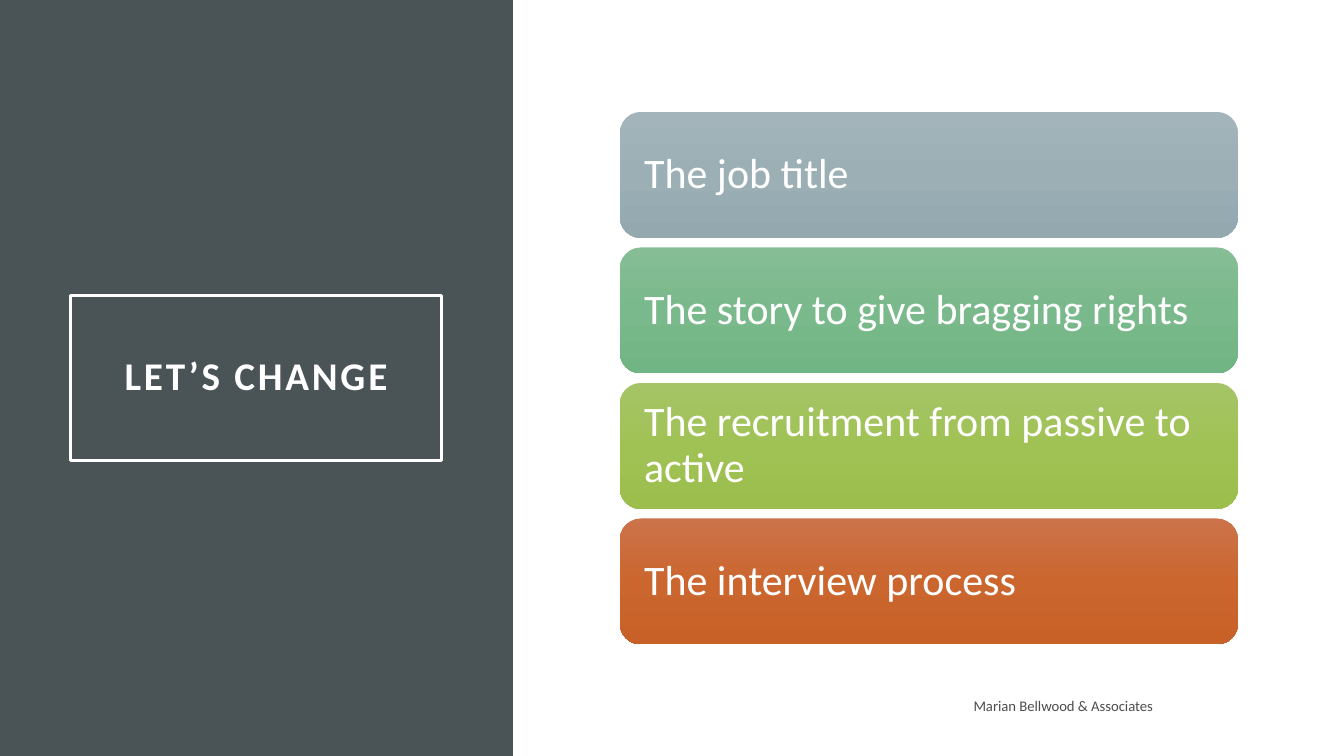
from copy import deepcopy

from pptx import Presentation
from pptx.dml.color import RGBColor
from pptx.enum.shapes import MSO_SHAPE
from pptx.enum.text import MSO_ANCHOR, MSO_AUTO_SIZE, PP_ALIGN
from pptx.oxml.ns import qn
from pptx.util import Cm, Pt

FONT = "Calibri"
WHITE = RGBColor(0xFF, 0xFF, 0xFF)
SLATE = RGBColor(0x4A, 0x53, 0x56)
FOOTER_GREY = RGBColor(0x4D, 0x4D, 0x4D)

# Each topic with the top, middle and bottom colour of its bar
TOPICS = [
    ("The job title", ("A3B5BB", "9BAFB5", "93A9AF")),
    ("The story to give bragging rights", ("86BD95", "7AB98B", "72B584")),
    ("The recruitment from passive to active", ("A5C466", "A0C255", "9BBE4D")),
    ("The interview process", ("CC734B", "CB662F", "C86128")),
]


def set_text(shape, text, size, color, alignment, inset, bold=False):
    frame = shape.text_frame
    frame.text = text
    frame.word_wrap = True
    frame.auto_size = MSO_AUTO_SIZE.NONE
    frame.vertical_anchor = MSO_ANCHOR.MIDDLE
    frame.margin_left = frame.margin_right = inset
    frame.margin_top = frame.margin_bottom = inset
    paragraph = frame.paragraphs[0]
    paragraph.alignment = alignment
    paragraph.line_spacing = 0.9
    font = paragraph.font
    font.name, font.size, font.bold = FONT, Pt(size), bold
    font.color.rgb = color
    return paragraph


def fill_vertical_gradient(shape, colors):
    shape.fill.gradient()
    shape.fill.gradient_angle = 270
    # Add a middle stop between the two default ones
    first_stop = shape._element.spPr.find(f".//{qn('a:gs')}")
    middle_stop = deepcopy(first_stop)
    middle_stop.set("pos", "50000")
    first_stop.addnext(middle_stop)
    for stop, color in zip(shape.fill.gradient_stops, colors):
        stop.color.rgb = RGBColor.from_string(color)


def add_title_panel(slide, left, top, width, height):
    # Dark panel, sent behind the title
    panel = slide.shapes.add_shape(MSO_SHAPE.RECTANGLE, left, top, width, height)
    panel.shadow.inherit = False
    panel.fill.solid()
    panel.fill.fore_color.rgb = SLATE
    panel.line.fill.background()
    title = slide.shapes.title
    title._element.addprevious(panel._element)

    # Framed title, centred vertically in the panel
    title.width, title.height = Cm(9.35), Cm(4.17)
    title.left = left + Cm(1.78)
    title.top = top + (height - title.height) // 2
    title.line.color.rgb = WHITE
    title.line.width = Pt(2.5)
    paragraph = set_text(title, "LET’S CHANGE", 28, WHITE,
                         PP_ALIGN.CENTER, Cm(0.5), bold=True)
    paragraph.runs[0].font._element.set("spc", "200")


def add_topic_bars(slide, left, top, width, height):
    gap = Cm(0.24)
    bar_height = (height - gap * (len(TOPICS) - 1)) // len(TOPICS)
    for index, (topic, colors) in enumerate(TOPICS):
        bar = slide.shapes.add_shape(
            MSO_SHAPE.ROUNDED_RECTANGLE,
            left, top + index * (bar_height + gap), width, bar_height)
        bar.shadow.inherit = False
        bar.line.fill.background()
        fill_vertical_gradient(bar, colors)
        set_text(bar, topic, 30, WHITE, PP_ALIGN.LEFT, Cm(0.46))


def add_footer(slide, left, top, width, height):
    footer = slide.shapes.add_textbox(left, top, width, height)
    paragraph = set_text(footer, "Marian Bellwood & Associates", 10.5,
                         FOOTER_GREY, PP_ALIGN.RIGHT, Cm(0.25))
    paragraph.line_spacing = 1.0


def main():
    presentation = Presentation()
    presentation.slide_width, presentation.slide_height = Cm(33.87), Cm(19.05)
    slide = presentation.slides.add_slide(presentation.slide_layouts[5])
    add_title_panel(slide, 0, 0, Cm(12.93), presentation.slide_height)
    add_footer(slide, Cm(16.05), Cm(17.32), Cm(13.26), Cm(0.9))
    add_topic_bars(slide, Cm(15.62), Cm(2.82), Cm(15.58), Cm(13.42))
    presentation.save("out.pptx")


if __name__ == "__main__":
    main()
